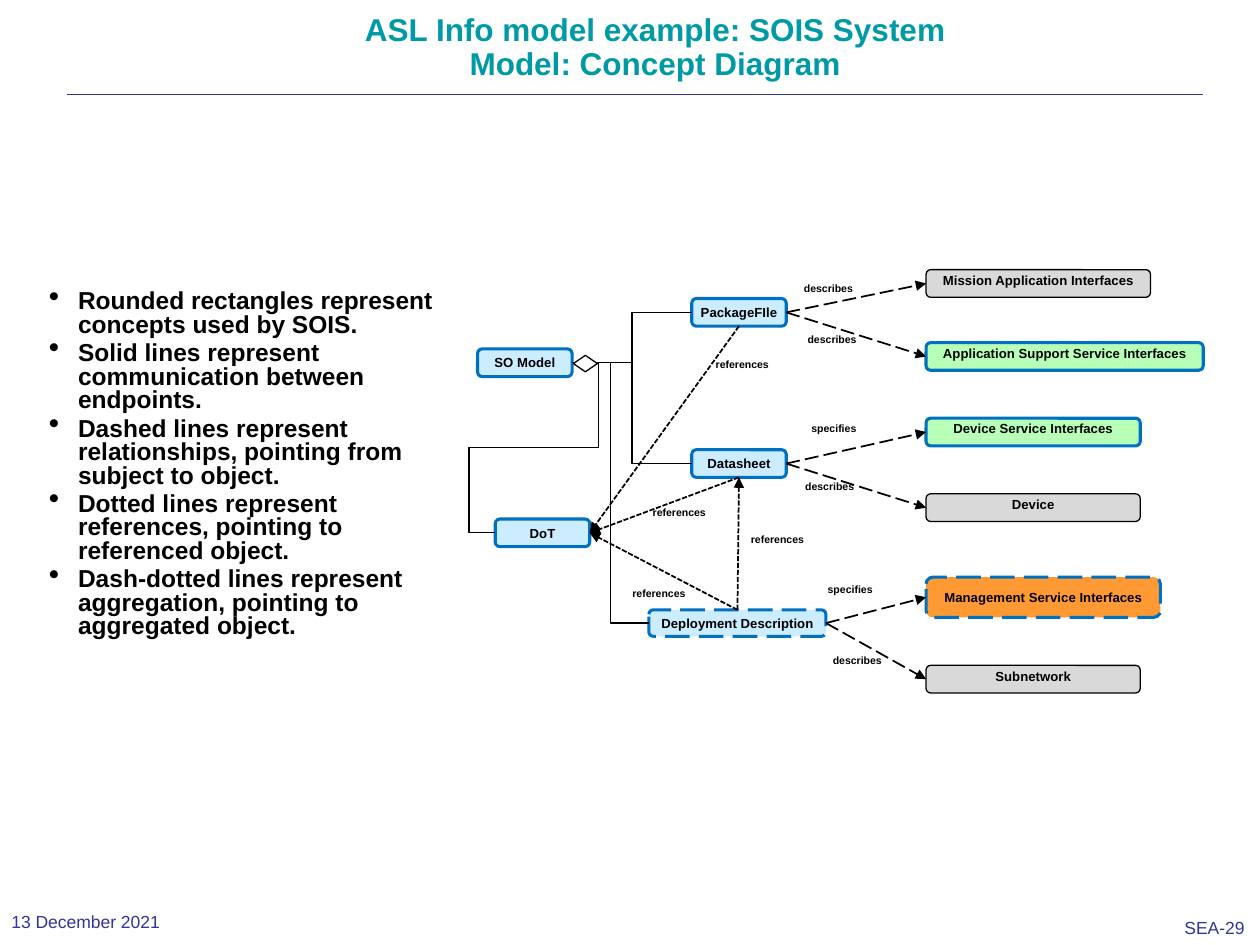
from dataclasses import dataclass

from lxml import etree
from pptx import Presentation
from pptx import util as u
from pptx.dml.color import RGBColor
from pptx.enum import dml, shapes, text
from pptx.oxml import ns

Pt = u.Pt
FONT = "Arial"
COLORS = {
    "teal": "0099A6", "navy": "333399", "black": "000000", "white": "FFFFFF",
    "blue": "0070C0", "sky": "CCECFF", "gray": "D9D9D9", "green": "B8FFB8",
    "orange": "FF9933",
}
TOP, LEFT, BOTTOM, RIGHT = range(4)
DASH = dml.MSO_LINE.LONG_DASH
DOT = dml.MSO_LINE.SQUARE_DOT
MIDDLE_X, TARGET_X = 395.3, 529.2


@dataclass
class Concept:
    name: str
    left: float
    top: float
    width: float = 54
    height: float = 15.8
    fill: str = "sky"
    border: str = "blue"
    weight: float = 1.75
    dashed: bool = False
    anchor: text.MSO_ANCHOR = text.MSO_ANCHOR.MIDDLE


@dataclass
class Relation:
    subject: str
    target: str
    label: str
    label_left: float
    label_top: float
    start: int = RIGHT
    end: int = LEFT
    dash: dml.MSO_LINE = DASH


def interface(name: str, top: float, width: float, fill: str = "gray") -> Concept:
    border, weight = ("black", 0.75) if fill == "gray" else ("blue", 1.75)
    return Concept(name, TARGET_X, top, width, fill=fill, border=border,
                   weight=weight, anchor=text.MSO_ANCHOR.TOP)


CONCEPTS = [
    interface("Mission Application Interfaces", 154.1, 128.2),
    Concept("PackageFIle", MIDDLE_X, 170.6),
    interface("Application Support Service Interfaces", 195.8, 158.4, "green"),
    Concept("SO Model", 272.9, 199.4),
    Concept("DoT", 283, 296.6),
    interface("Device Service Interfaces", 239, 122.4, "green"),
    Concept("Datasheet", MIDDLE_X, 257),
    interface("Device", 282.2, 122.4),
    Concept("Deployment Description", 370.8, 348.5, 101.2, 15.1, dashed=True),
    Concept("Management Service Interfaces", TARGET_X, 329.8, 133.9, 23,
            fill="orange", dashed=True),
    interface("Subnetwork", 380.2, 122.4),
]

RELATIONS = [
    Relation("PackageFIle", "Mission Application Interfaces", "describes", 459.4, 161.3),
    Relation("PackageFIle", "Application Support Service Interfaces", "describes", 461.5, 190.1),
    Relation("Datasheet", "Device Service Interfaces", "specifies", 463.7, 241.2),
    Relation("Datasheet", "Device", "describes", 460.1, 274.3),
    Relation("Deployment Description", "Management Service Interfaces", "specifies", 473, 333.4),
    Relation("Deployment Description", "Subnetwork", "describes", 475.9, 373.7),
    Relation("PackageFIle", "DoT", "references", 409, 204.5, BOTTOM, RIGHT, DOT),
    Relation("Datasheet", "DoT", "references", 373, 289.4, BOTTOM, RIGHT, DOT),
    Relation("Deployment Description", "DoT", "references", 361.4, 335.5, TOP, RIGHT, DOT),
    Relation("Deployment Description", "Datasheet", "references", 429.1, 304.6, TOP, BOTTOM, DOT),
]

RULES = [
    "Rounded rectangles represent concepts used by SOIS.",
    "Solid lines represent communication between endpoints.",
    "Dashed lines represent relationships, pointing from subject to object.",
    "Dotted lines represent references, pointing to referenced object.",
    "Dash-dotted lines represent aggregation, pointing to aggregated object.",
]


def rgb(name: str) -> RGBColor:
    return RGBColor.from_string(COLORS[name])


def style_text(frame, size: float, color: str = "black", bold: bool = False) -> None:
    for paragraph in frame.paragraphs:
        for run in paragraph.runs:
            run.font.name, run.font.size, run.font.bold = FONT, Pt(size), bold
            run.font.color.rgb = rgb(color)


def set_margins(frame, horizontal: float, vertical: float) -> None:
    frame.margin_left = frame.margin_right = Pt(horizontal)
    frame.margin_top = frame.margin_bottom = Pt(vertical)


def add_text(slide, words: str, left: float, top: float, width: float, height: float,
             size: float, color: str = "black", bold: bool = False, wrap: bool = True,
             margins: tuple[float, float] = (7.2, 3.6)):
    frame = slide.shapes.add_textbox(Pt(left), Pt(top), Pt(width), Pt(height)).text_frame
    frame.word_wrap = wrap
    set_margins(frame, *margins)
    frame.text = words
    style_text(frame, size, color, bold)
    return frame


def add_rules(slide) -> None:
    frame = add_text(slide, "\n".join(RULES), 20.9, 162.7, 236.9, 281.5, 14, bold=True)
    for index, paragraph in enumerate(frame.paragraphs):
        properties = paragraph._p.get_or_add_pPr()
        properties.set("marL", str(Pt(16.6)))
        properties.set("indent", str(-Pt(16.6)))
        etree.SubElement(properties, ns.qn("a:buSzPct")).set("val", "125000")
        etree.SubElement(properties, ns.qn("a:buChar")).set("char", "•")
        paragraph.line_spacing = 0.8
        paragraph.space_before = Pt(1.4 if index else 0)
        paragraph.space_after = Pt(1.4)


def add_concept(slide, concept: Concept):
    box = slide.shapes.add_shape(shapes.MSO_SHAPE.ROUNDED_RECTANGLE, Pt(concept.left),
                                 Pt(concept.top), Pt(concept.width), Pt(concept.height))
    box.shadow.inherit = False
    box.fill.solid()
    box.fill.fore_color.rgb = rgb(concept.fill)
    box.line.color.rgb = rgb(concept.border)
    box.line.width = Pt(concept.weight)
    if concept.dashed:
        box.line.dash_style = DASH
    frame = box.text_frame
    frame.word_wrap = True
    frame.vertical_anchor = concept.anchor
    set_margins(frame, 0.7, 0.7)
    frame.text = concept.name
    frame.paragraphs[0].alignment = text.PP_ALIGN.CENTER
    style_text(frame, 7.5, bold=True)
    return box


def add_line(slide, start: tuple[int, int], end: tuple[int, int], weight: float,
             color: str = "black", kind=shapes.MSO_CONNECTOR.STRAIGHT):
    line = slide.shapes.add_connector(kind, *start, *end)
    line.line.color.rgb = rgb(color)
    line.line.width = Pt(weight)
    etree.SubElement(line._element.spPr, ns.qn("a:effectLst"))
    return line


def add_relation(slide, relation: Relation, boxes: dict) -> None:
    arrow = add_line(slide, (0, 0), (0, 0), 1)
    arrow.begin_connect(boxes[relation.subject], relation.start)
    arrow.end_connect(boxes[relation.target], relation.end)
    arrow.line.dash_style = relation.dash
    etree.SubElement(arrow.line._get_or_add_ln(), ns.qn("a:tailEnd")).set("type", "triangle")
    add_text(slide, relation.label, relation.label_left, relation.label_top, 33, 9.4, 6,
             bold=True, wrap=False, margins=(0, 0))


def add_aggregation(slide, part, whole):
    start = (part.left, part.top + part.height // 2)
    end = (whole.left + whole.width, whole.top + whole.height // 2)
    return add_line(slide, start, end, 0.75, kind=shapes.MSO_CONNECTOR.ELBOW)


def route_around(connector, adjustments: tuple[int, ...]) -> None:
    geometry = connector._element.spPr.find(ns.qn("a:prstGeom"))
    geometry.set("prst", "bentConnector5")
    guides = geometry.find(ns.qn("a:avLst"))
    for number, value in enumerate(adjustments, 1):
        guide = etree.SubElement(guides, ns.qn("a:gd"))
        guide.set("name", f"adj{number}")
        guide.set("fmla", f"val {value}")


def add_diamond(slide) -> None:
    diamond = slide.shapes.add_shape(shapes.MSO_SHAPE.FLOWCHART_DECISION,
                                     Pt(329.8), Pt(200.9), Pt(9.4), Pt(13.7))
    diamond.rotation = 270
    diamond.shadow.inherit = False
    diamond.fill.solid()
    diamond.fill.fore_color.rgb = rgb("white")
    diamond.line.color.rgb = rgb("black")
    diamond.line.width = Pt(0.75)


def main() -> None:
    deck = Presentation()
    deck.slide_width, deck.slide_height = Pt(720), Pt(540)
    slide = deck.slides.add_slide(deck.slide_layouts[6])

    add_line(slide, (Pt(38.2), Pt(54)), (Pt(687.6), Pt(54)), 0.13, "navy")
    add_text(slide, "SEA-29", 670.3, 521.3, 49, 18.7, 10, "navy", wrap=False, margins=(6.5, 2.9))
    title = add_text(slide, "ASL Info model example: SOIS System Model: Concept Diagram",
                     180, -41, 388.8, 91.4, 18, "teal", bold=True)
    title.vertical_anchor = text.MSO_ANCHOR.BOTTOM
    title.paragraphs[0].alignment = text.PP_ALIGN.CENTER
    title.paragraphs[0].line_spacing = 0.9
    add_rules(slide)

    boxes = {concept.name: add_concept(slide, concept) for concept in CONCEPTS}
    for relation in RELATIONS:
        add_relation(slide, relation, boxes)
    for part in ("PackageFIle", "Datasheet", "Deployment Description"):
        add_aggregation(slide, boxes[part], boxes["SO Model"])
    route_around(add_aggregation(slide, boxes["DoT"], boxes["SO Model"]), (-34300, 50000, 134300))
    add_diamond(slide)

    date = add_text(slide, "13 December 2021", 0, 516.2, 136.1, 20.9, 10, "navy", margins=(6.5, 3.6))
    date.vertical_anchor = text.MSO_ANCHOR.MIDDLE
    deck.save("out.pptx")


if __name__ == "__main__":
    main()
